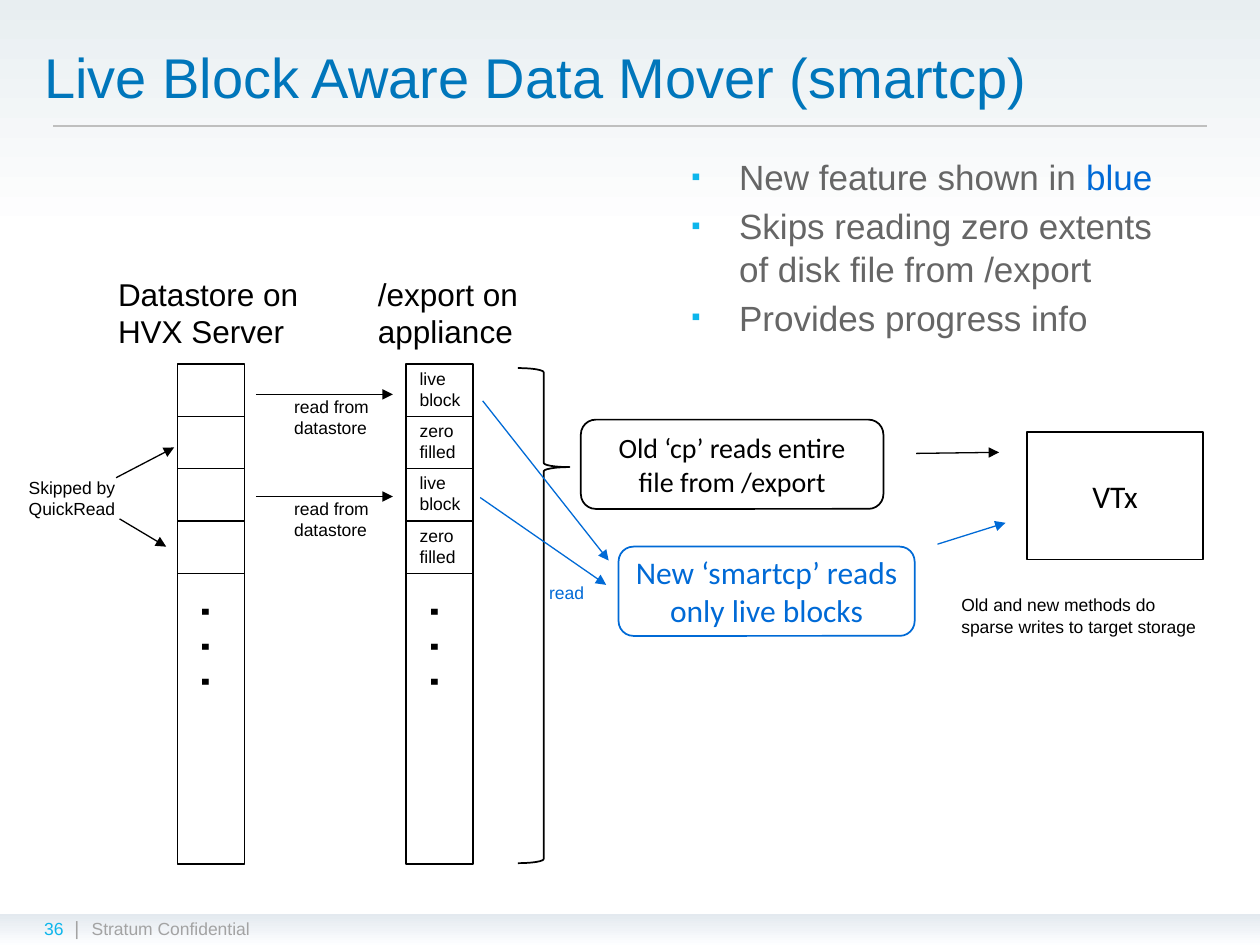
from lxml import etree
from pptx import Presentation
from pptx.dml.color import RGBColor
from pptx.enum.shapes import MSO_CONNECTOR, MSO_SHAPE
from pptx.enum.text import MSO_ANCHOR, PP_ALIGN
from pptx.oxml.ns import qn
from pptx.util import Cm, Pt

RECT, ROUND, BRACE = MSO_SHAPE.RECTANGLE, MSO_SHAPE.ROUNDED_RECTANGLE, MSO_SHAPE.LEFT_BRACE
STRAIGHT = MSO_CONNECTOR.STRAIGHT
LEFT, CENTER = PP_ALIGN.LEFT, PP_ALIGN.CENTER
TOP, MIDDLE = MSO_ANCHOR.TOP, MSO_ANCHOR.MIDDLE

BLACK = RGBColor(0x00, 0x00, 0x00)
BLUE = RGBColor(0x00, 0x6A, 0xD6)
TITLE_BLUE = RGBColor(0x00, 0x76, 0xBB)
CYAN = RGBColor(0x0D, 0xB6, 0xEC)
GREY = RGBColor(0x66, 0x66, 0x66)
FOOTER_GREY = RGBColor(0xA3, 0xA3, 0xA3)
RULE_GREY = RGBColor(0xBF, 0xBF, 0xBF)

BANDS = [
    ((0, 0, 25.4, 19.05), RGBColor(0xE8, 0xEE, 0xF1), RGBColor(0xFF, 0xFF, 0xFF), 0.25),
    ((0, 18.42, 25.4, 0.63), RGBColor(0xE3, 0xE9, 0xEF), RGBColor(0xFD, 0xFE, 0xFF), 1),
]
TITLE = "Live Block Aware Data Mover (smartcp)"
FOOTER = [
    ("Stratum Confidential", (1.6, 18.39, 12.7, 1.19), 10, FOOTER_GREY),
    ("|", (1.27, 18.34, 0.48, 0.69), 11, FOOTER_GREY),
    ("36", (0.64, 18.39, 1.3, 0.69), 10, CYAN),
]
BULLETS = [
    [("New feature shown in ", GREY), ("blue", BLUE)],
    [("Skips reading zero extents\vof disk file from /export", GREY)],
    [("Provides progress info", GREY)],
]
HEADINGS = [
    ("Datastore on\vHVX Server", (2.13, 5.41, 4.19, 1.8)),
    ("/export on\vappliance", (7.37, 5.41, 3.43, 1.8)),
]
COLUMNS = [3.58, 8.18]
COLUMN_TOP, COLUMN_W, COLUMN_H, BLOCK_H = 7.34, 1.35, 10.08, 1.055
BLOCKS = ["live\vblock", "zero\vfilled", "live\vblock", "zero\vfilled"]
READ_ROWS = [7.95, 10.01]
LABELS = [
    ("Skipped by\vQuickRead", (0.33, 9.5, 2.31, 1.12), BLACK, False),
    ("read", (10.82, 11.61, 1.22, 0.69), BLUE, False),
    ("Old and new methods do sparse writes to target storage",
     (19.13, 11.86, 5.51, 1.12), BLACK, True),
]
BOXES = [
    ("VTx", RECT, (20.7, 8.71, 3.56, 2.57), 18, BLACK),
    ("Old ‘cp’ reads entire\vfile from /export", ROUND, (11.71, 8.46, 6.1, 1.8), 16, BLACK),
    ("New ‘smartcp’ reads\vonly live blocks", ROUND, (12.47, 11.02, 5.97, 1.8), 18, BLUE),
]
ARROWS = [
    ((2.34, 9.63, 3.51, 9.02), BLACK),
    ((2.41, 10.46, 3.35, 11.02), BLACK),
    ((9.73, 8.08, 12.27, 11.3), BLUE),
    ((9.68, 10.03, 12.22, 11.79), BLUE),
    ((18.47, 9.14, 20.14, 9.12), BLACK),
    ((18.9, 10.97, 20.27, 10.54), BLUE),
]


def cms(values):
    return [Cm(v) for v in values]


def write(tf, text, size=10, color=BLACK, font="Arial", align=LEFT, anchor=TOP, wrap=False):
    tf.word_wrap = wrap
    tf.vertical_anchor = anchor
    p = tf.paragraphs[0]
    p.text = text
    p.alignment = align
    for r in p.runs:
        style(r, size, color, font)


def style(r, size, color, font="Arial"):
    r.font.size = Pt(size)
    r.font.name = font
    r.font.color.rgb = color


def add_text(s, text, box, **fmt):
    sp = s.shapes.add_textbox(*cms(box))
    write(sp.text_frame, text, **fmt)
    return sp


def add_outline(s, kind, box, color=BLACK):
    sp = s.shapes.add_shape(kind, *cms(box))
    sp.shadow.inherit = False
    sp.fill.background()
    sp.line.color.rgb = color
    sp.line.width = Pt(1)
    return sp


def add_line(s, ends, color=BLACK, arrow=False):
    c = s.shapes.add_connector(STRAIGHT, *cms(ends))
    c.line.color.rgb = color
    c.line.width = Pt(0.75)
    if arrow:
        etree.SubElement(c.line._get_or_add_ln(), qn("a:tailEnd"), type="triangle")
    etree.SubElement(c._element.spPr, qn("a:effectLst"))


def add_band(s, box, start, end, stop):
    sp = s.shapes.add_shape(RECT, *cms(box))
    sp.shadow.inherit = False
    sp.line.fill.background()
    sp.fill.gradient()
    sp.fill.gradient_angle = 270
    first, last = sp.fill.gradient_stops
    first.color.rgb, first.position = start, 0
    last.color.rgb, last.position = end, stop


def add_bullets(s, items, box):
    tf = s.shapes.add_textbox(*cms(box)).text_frame
    tf.word_wrap = True
    for i, runs in enumerate(items):
        p = tf.paragraphs[0] if i == 0 else tf.add_paragraph()
        pPr = p._p.get_or_add_pPr()
        pPr.set("marL", str(Cm(0.96)))
        pPr.set("indent", str(-Cm(0.96)))
        clr = etree.SubElement(pPr, qn("a:buClr"))
        etree.SubElement(clr, qn("a:srgbClr"), val=str(CYAN))
        etree.SubElement(pPr, qn("a:buSzPct"), val="75000")
        etree.SubElement(pPr, qn("a:buFont"), typeface="Arial")
        etree.SubElement(pPr, qn("a:buChar"), char="▪")
        if i:
            p.space_before = Pt(4)
        for text, color in runs:
            for n, part in enumerate(text.split("\v")):
                if n:
                    p.add_line_break()
                r = p.add_run()
                r.text = part
                style(r, 20, color)


def add_column(s, x):
    add_outline(s, RECT, (x, COLUMN_TOP, COLUMN_W, COLUMN_H))
    for i in range(1, len(BLOCKS) + 1):
        y = COLUMN_TOP + i * BLOCK_H
        add_line(s, (x, y, x + COLUMN_W, y))
    dots = add_text(s, ". . .", (x - 0.14, 12.17, 2.29, 1.8), size=36, wrap=True)
    dots.rotation = 90


def main():
    prs = Presentation()
    prs.slide_width, prs.slide_height = Cm(25.4), Cm(19.05)
    s = prs.slides.add_slide(prs.slide_layouts[6])

    for band in BANDS:
        add_band(s, *band)
    for text, box, size, color in FOOTER:
        add_text(s, text, box, size=size, color=color, wrap=True)
    add_line(s, (1.07, 2.54, 24.33, 2.54), RULE_GREY)
    add_text(s, TITLE, (0.64, 0.64, 21.59, 1.78), size=32, color=TITLE_BLUE,
             anchor=MIDDLE, wrap=True)

    for text, box in HEADINGS:
        add_text(s, text, box, size=18)
    for x in COLUMNS:
        add_column(s, x)
    for i, text in enumerate(BLOCKS):
        add_text(s, text, (COLUMNS[1] + 0.03, COLUMN_TOP - 0.05 + i * BLOCK_H, 1.45, 1.12))
    for y in READ_ROWS:
        add_line(s, (5.16, y, 7.92, y), arrow=True)
        add_text(s, "read from\vdatastore", (5.68, y - 0.1, 2.03, 1.12))

    brace = add_outline(s, BRACE, (10.44, 7.42, 1.04, 9.98))
    brace.rotation = 180
    brace.adjustments[0], brace.adjustments[1] = 0.08, 0.8
    for text, kind, box, size, color in BOXES:
        sp = add_outline(s, kind, box, color)
        write(sp.text_frame, text, size=size, color=color, font="Calibri",
              align=CENTER, anchor=MIDDLE)
    for ends, color in ARROWS:
        add_line(s, ends, color, arrow=True)
    for text, box, color, wrap in LABELS:
        add_text(s, text, box, color=color, wrap=wrap)
    add_bullets(s, BULLETS, (13.69, 3.02, 10.67, 4.14))

    prs.save("out.pptx")


if __name__ == "__main__":
    main()
